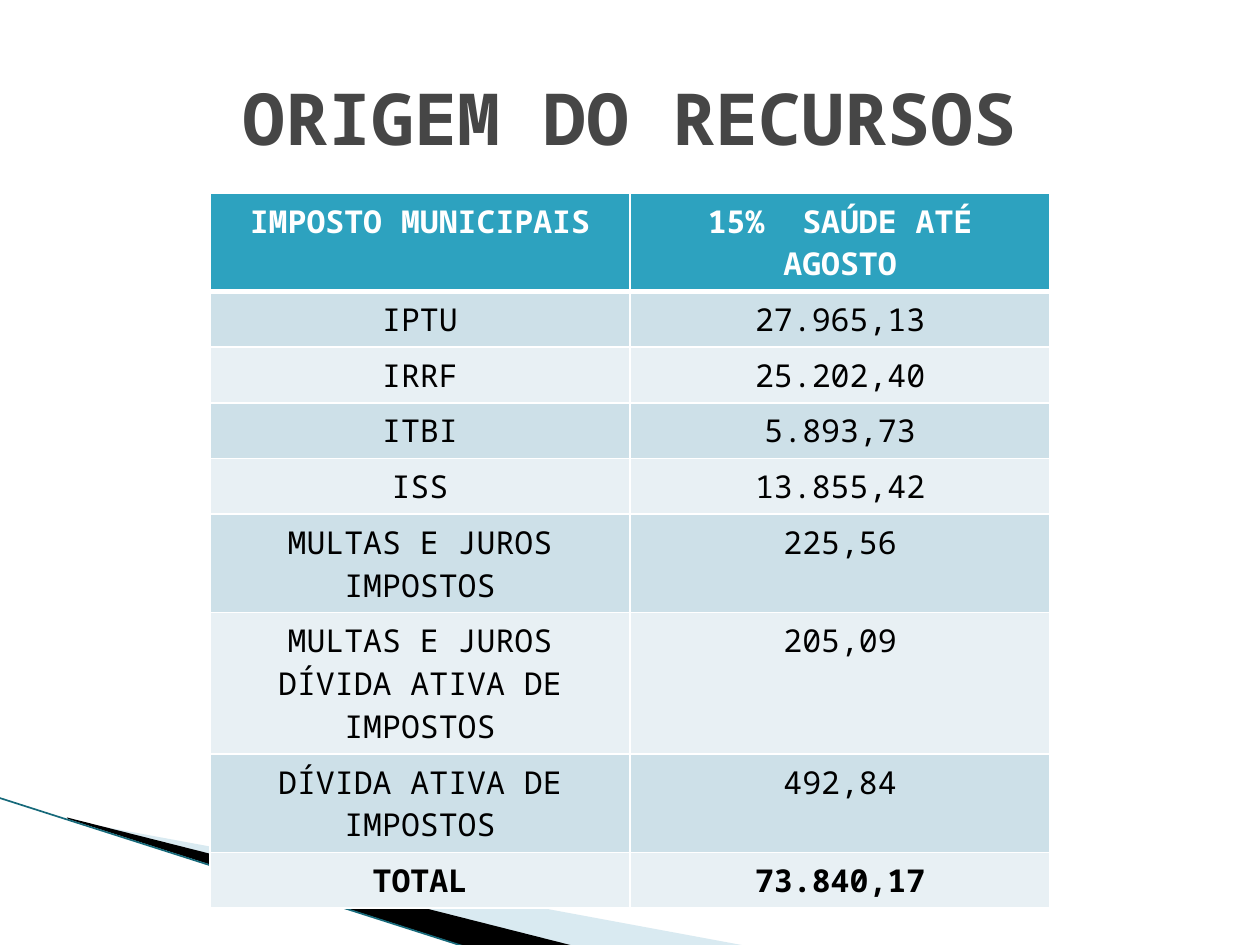
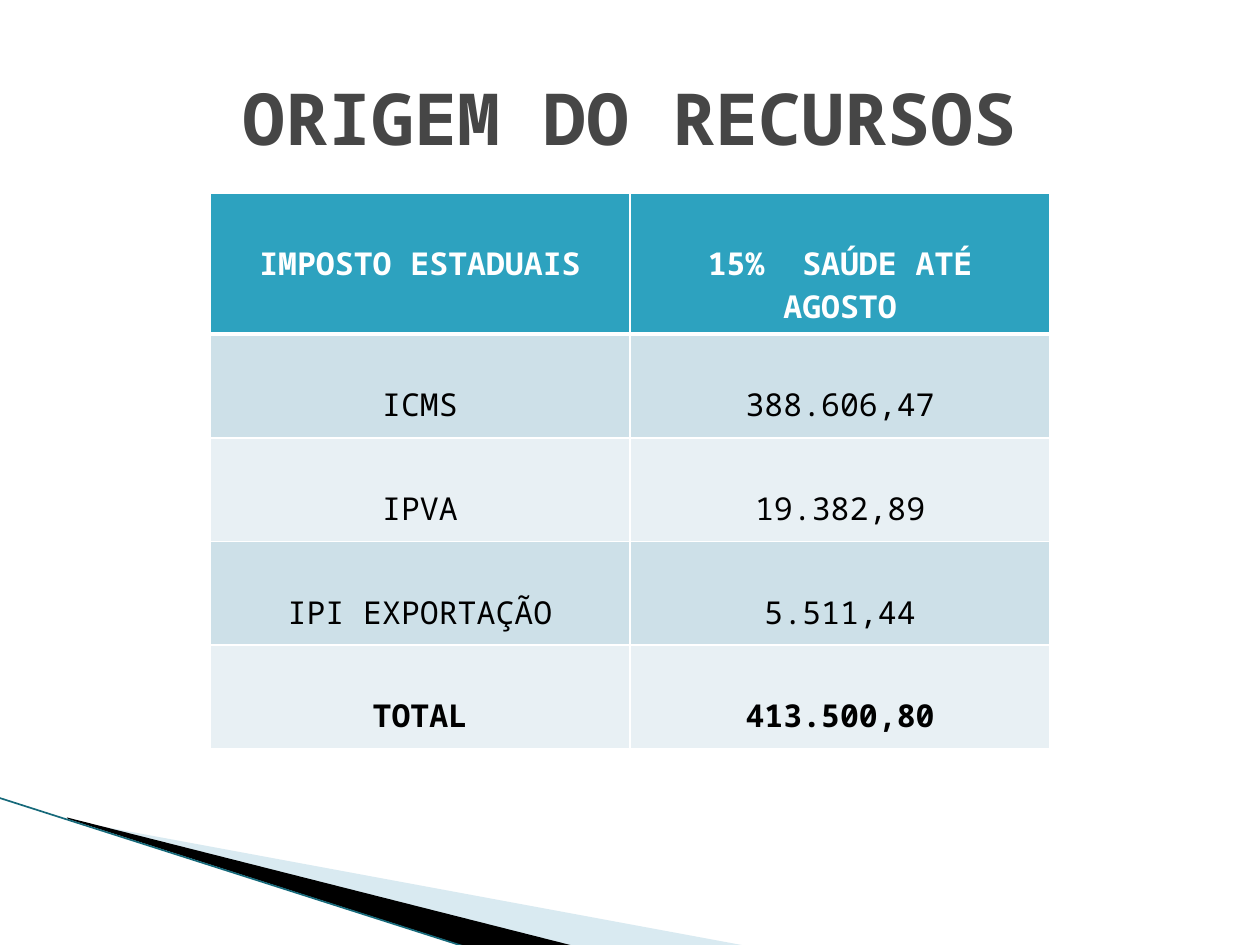
from lxml import etree
from pptx import Presentation
from pptx.dml.color import RGBColor
from pptx.enum import shapes, text
from pptx.oxml.ns import qn
from pptx.util import Cm, Pt

HEADING = "ORIGEM DO RECURSOS"
SHARE = "15%  SAÚDE ATÉ AGOSTO"
TAXES = [
    {
        "row_height": 1.05,
        "top_margin": 0.13,
        "rows": [
            ("IMPOSTO MUNICIPAIS", SHARE),
            ("IPTU", "27.965,13"),
            ("IRRF", "25.202,40"),
            ("ITBI", "5.893,73"),
            ("ISS", "13.855,42"),
            ("MULTAS E JUROS IMPOSTOS", "225,56"),
            ("MULTAS E JUROS DÍVIDA ATIVA DE IMPOSTOS", "205,09"),
            ("DÍVIDA ATIVA DE IMPOSTOS", "492,84"),
            ("TOTAL", "73.840,17"),
        ],
    },
    {
        "row_height": 2.09,
        "top_margin": 0.99,
        "rows": [
            ("IMPOSTO ESTADUAIS", SHARE),
            ("ICMS", "388.606,47"),
            ("IPVA", "19.382,89"),
            ("IPI EXPORTAÇÃO", "5.511,44"),
            ("TOTAL", "413.500,80"),
        ],
    },
]

FONT = "Noto Sans Mono"
WHITE, BLACK, GREY = "FFFFFF", "000000", "464646"
TEAL, DARK_TEAL, PALE = "2DA2BF", "16697A", "A0CBDC"
BANDS = ["E8F0F4", "CDE0E8"]

WEDGES = [
    (PALE, 40, [(1.4, 16.54), (15.11, 19.08), (11.58, 19.08), (1.4, 16.51)]),
    (BLACK, 100, [(1.35, 16.48), (11.61, 19.08), (9.45, 19.1), (1.37, 16.51)]),
]
EDGE = [(-0.03, 16.08), (9.42, 19.1)]
TABLE_LEFT, TABLE_TOP, COLUMN_WIDTH = 4.23, 3.89, 8.47


def colour(value):
    return RGBColor.from_string(value)


def points(pairs):
    return [(Cm(x), Cm(y)) for x, y in pairs]


def style_text(frame, size, value, bold):
    for paragraph in frame.paragraphs:
        paragraph.alignment = text.PP_ALIGN.CENTER
        for run in paragraph.runs:
            run.font.name = FONT
            run.font.size = Pt(size)
            run.font.bold = bold
            run.font.color.rgb = colour(value)


def draw_corner(slide):
    for value, opacity, outline in WEDGES:
        start, *rest = points(outline)
        builder = slide.shapes.build_freeform(*start)
        builder.add_line_segments(rest)
        wedge = builder.convert_to_shape()
        wedge.shadow.inherit = False
        wedge.fill.solid()
        wedge.fill.fore_color.rgb = colour(value)
        wedge.line.fill.background()
        if opacity < 100:
            tint = wedge.element.spPr.find(qn("a:solidFill"))[0]
            etree.SubElement(tint, qn("a:alpha"), val=str(opacity * 1000))
    start, end = points(EDGE)
    edge = slide.shapes.add_connector(shapes.MSO_CONNECTOR.STRAIGHT, *start, *end)
    edge.line.color.rgb = colour(DARK_TEAL)
    edge.line.width = Pt(0.95)
    etree.SubElement(edge.element.spPr, qn("a:effectLst"))


def write_heading(slide):
    heading = slide.shapes.title
    heading.left, heading.top = Cm(1.27), Cm(0.76)
    heading.width, heading.height = Cm(22.86), Cm(3.18)
    frame = heading.text_frame
    frame.text = HEADING
    frame.auto_size = text.MSO_AUTO_SIZE.NONE
    frame.vertical_anchor = text.MSO_ANCHOR.MIDDLE
    style_text(frame, 41, GREY, True)


def draw_borders(cell, bottom):
    properties = cell._tc.get_or_add_tcPr()
    for side, width in (("L", 1), ("R", 1), ("T", 1), ("B", bottom)):
        border = etree.SubElement(properties, qn(f"a:ln{side}"), w=str(Pt(width)))
        fill = etree.SubElement(border, qn("a:solidFill"))
        etree.SubElement(fill, qn("a:srgbClr"), val=WHITE)


def add_taxes(slide, taxes):
    rows = taxes["rows"]
    table = slide.shapes.add_table(
        len(rows), 2, Cm(TABLE_LEFT), Cm(TABLE_TOP),
        Cm(2 * COLUMN_WIDTH), Cm(taxes["row_height"] * len(rows)),
    ).table
    for column in table.columns:
        column.width = Cm(COLUMN_WIDTH)
    for number, values in enumerate(rows):
        header = number == 0
        total = number == len(rows) - 1
        table.rows[number].height = Cm(taxes["row_height"])
        for cell, value in zip(table.rows[number].cells, values):
            cell.text_frame.text = value
            cell.margin_top = Cm(taxes["top_margin"])
            draw_borders(cell, 3 if header else 1)
            cell.fill.solid()
            cell.fill.fore_color.rgb = colour(TEAL if header else BANDS[number % 2])
            style_text(cell.text_frame, 18, WHITE if header else BLACK, header or total)


def main():
    deck = Presentation()
    deck.slide_width, deck.slide_height = Cm(25.4), Cm(19.05)
    for taxes in TAXES:
        slide = deck.slides.add_slide(deck.slide_layouts.get_by_name("Title Only"))
        draw_corner(slide)
        write_heading(slide)
        add_taxes(slide, taxes)
    deck.save("out.pptx")


if __name__ == "__main__":
    main()
